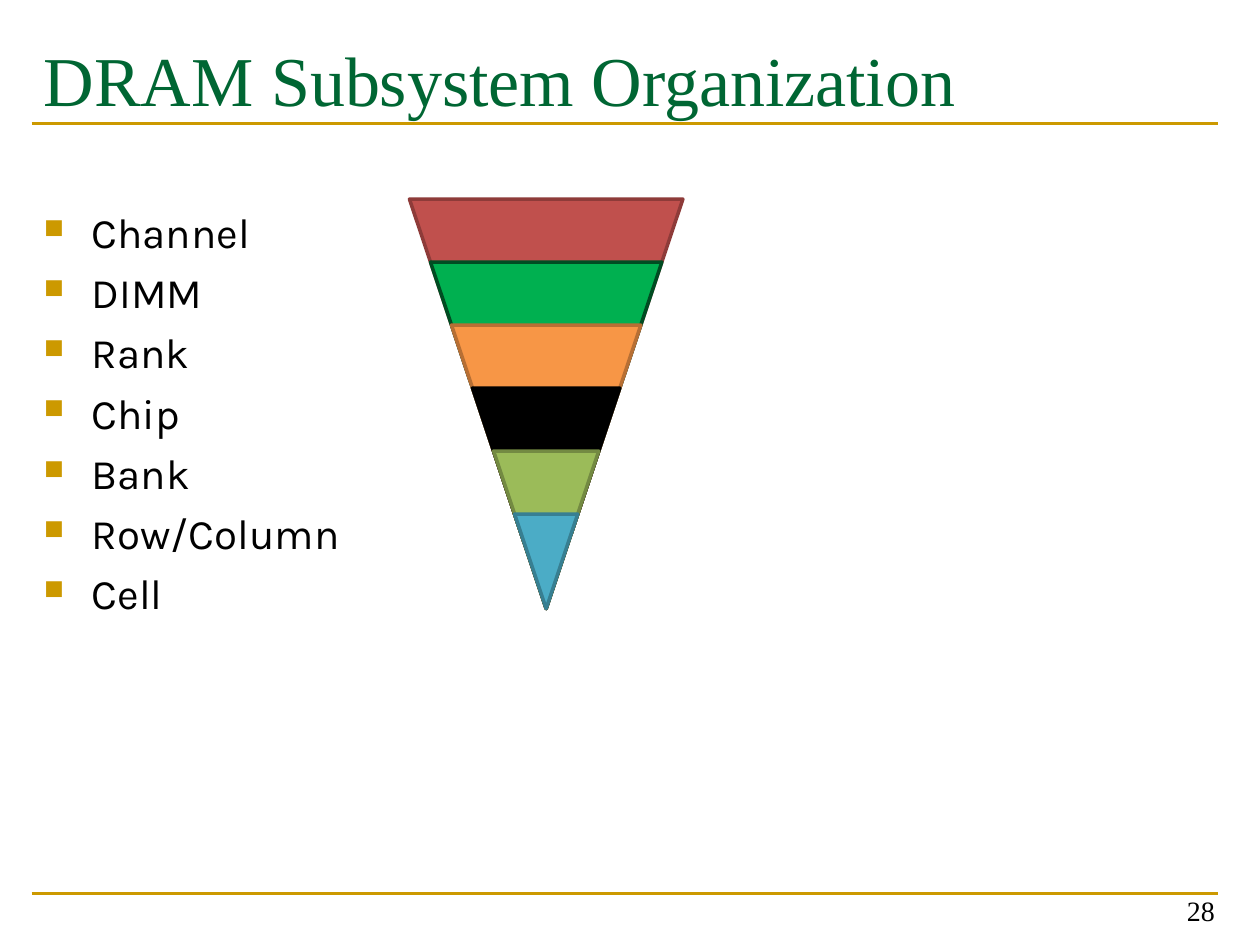
from dataclasses import dataclass

from lxml import etree
from pptx import Presentation
from pptx.dml.color import RGBColor
from pptx.enum.shapes import MSO_CONNECTOR, MSO_SHAPE
from pptx.enum.text import MSO_ANCHOR, PP_ALIGN
from pptx.oxml.ns import qn
from pptx.util import Inches, Pt


@dataclass(frozen=True)
class Theme:
    green: str = "006633"
    gold: str = "CC9900"
    black: str = "000000"
    serif: str = "Times New Roman"
    sans: str = "Karla"
    title: float = 40
    body: float = 24
    number: float = 16
    gap: float = 5.6
    rule: float = 1.5
    outline: float = 2


THEME = Theme()
LEVELS = ["Channel", "DIMM", "Rank", "Chip", "Bank", "Row/Column", "Cell"]
LAYERS = [  # fill, outline
    ("C0504D", "8E3B39"),
    ("00B050", "004C22"),
    ("F79646", "B76F34"),
    ("000000", "000000"),
    ("9BBB59", "738A42"),
    ("4BACC6", "377F92"),
]


def rgb(value):
    return RGBColor.from_string(value)


def add_text(s, box, lines, *, font, size, color, align=PP_ALIGN.LEFT,
             anchor=MSO_ANCHOR.TOP, gap=0, bullets=False):
    tf = s.shapes.add_textbox(*map(Inches, box)).text_frame
    tf.word_wrap = True
    tf.vertical_anchor = anchor
    for i, line in enumerate(lines):
        p = tf.paragraphs[0] if i == 0 else tf.add_paragraph()
        p.alignment = align
        p.space_after = Pt(gap)
        r = p.add_run()
        r.text = line
        r.font.name = font
        r.font.size = Pt(size)
        r.font.color.rgb = rgb(color)
        if bullets:
            add_bullet(p)


def add_bullet(p):
    """Give the paragraph a small gold square and a hanging indent."""
    pPr = p._p.get_or_add_pPr()
    indent = Inches(0.38)
    pPr.set("marL", str(indent))
    pPr.set("indent", str(-indent))
    color = etree.SubElement(pPr, qn("a:buClr"))
    etree.SubElement(color, qn("a:srgbClr"), val=THEME.gold)
    etree.SubElement(pPr, qn("a:buSzPct"), val="65000")
    etree.SubElement(pPr, qn("a:buChar"), char="■")


def add_rule(s, left, top, width):
    line = s.shapes.add_connector(
        MSO_CONNECTOR.STRAIGHT, Inches(left), Inches(top),
        Inches(left + width), Inches(top))
    line.line.color.rgb = rgb(THEME.gold)
    line.line.width = Pt(THEME.rule)
    etree.SubElement(line._element.spPr, qn("a:effectLst"))


def add_header(s, left, top, width, height):
    add_text(s, (left, top, width, height), ["DRAM Subsystem Organization"],
             font=THEME.serif, size=THEME.title, color=THEME.green)
    add_rule(s, left, top + height, width)


def add_levels(s, left, top, width, height):
    add_text(s, (left, top, width, height), LEVELS, font=THEME.sans,
             size=THEME.body, color=THEME.black, gap=THEME.gap, bullets=True)


def add_funnel(s, left, top, width, height, step=0.5):
    """Stack ever smaller triangles that share the apex at the bottom."""
    for i, (fill, outline) in enumerate(LAYERS):
        drop = i * step
        h = height - drop
        w = width * h / height
        layer = s.shapes.add_shape(
            MSO_SHAPE.FLOWCHART_MERGE, Inches(left + (width - w) / 2),
            Inches(top + drop), Inches(w), Inches(h))
        layer.shadow.inherit = False
        layer.fill.solid()
        layer.fill.fore_color.rgb = rgb(fill)
        layer.line.color.rgb = rgb(outline)
        layer.line.width = Pt(THEME.outline)


def add_footer(s, left, top, width):
    add_rule(s, left, top, width)
    add_text(s, (7.41, 6.91, 2.33, 0.5), ["28"], font=THEME.serif,
             size=THEME.number, color=THEME.black, align=PP_ALIGN.RIGHT,
             anchor=MSO_ANCHOR.BOTTOM)


def main():
    prs = Presentation()
    prs.slide_width, prs.slide_height = Inches(10), Inches(7.5)
    s = prs.slides.add_slide(prs.slide_layouts[6])
    add_header(s, 0.25, 0.24, 9.42, 0.74)
    add_levels(s, 0.25, 1.59, 2.9, 3.4)
    add_funnel(s, 3.25, 1.58, 2.17, 3.25)
    add_footer(s, 0.25, 7.09, 9.42)
    prs.save("out.pptx")


if __name__ == "__main__":
    main()
